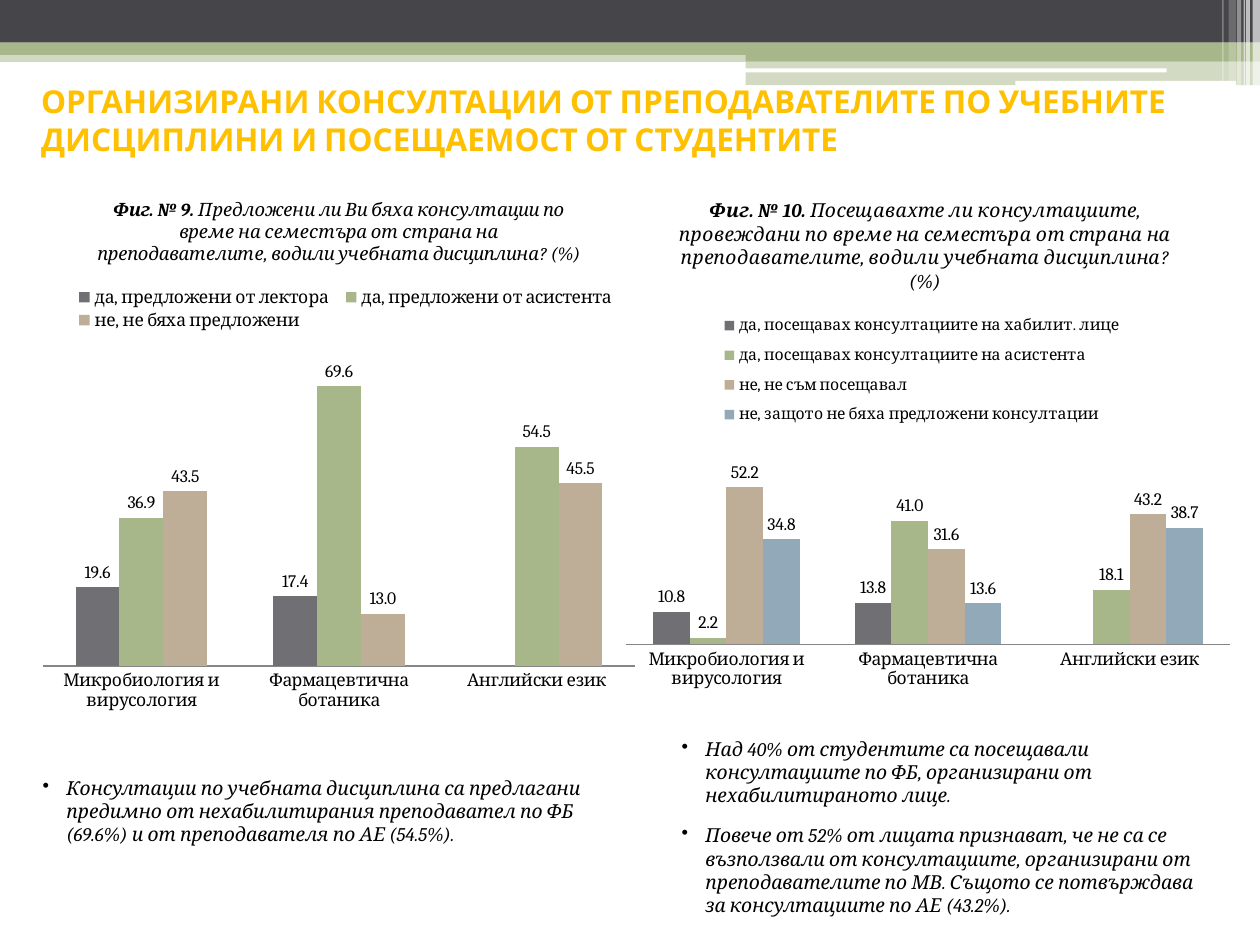
"""Build a slide on teaching consultations with two column charts and their findings."""
from dataclasses import dataclass

from lxml import etree
from pptx import Presentation
from pptx.chart.chart import Chart
from pptx.chart.data import CategoryChartData
from pptx.dml.color import RGBColor
from pptx.enum.chart import XL_CHART_TYPE, XL_LABEL_POSITION, XL_LEGEND_POSITION, XL_TICK_MARK
from pptx.enum.shapes import MSO_SHAPE
from pptx.enum.text import MSO_ANCHOR
from pptx.oxml import parse_xml
from pptx.oxml.ns import nsdecls, qn
from pptx.slide import Slide
from pptx.text.text import Font, TextFrame
from pptx.util import Cm, Pt

RECT, ROUND = MSO_SHAPE.RECTANGLE, MSO_SHAPE.ROUNDED_RECTANGLE
COLUMNS = XL_CHART_TYPE.COLUMN_CLUSTERED
LEGEND_TOP = XL_LEGEND_POSITION.TOP
LABEL_ABOVE = XL_LABEL_POSITION.OUTSIDE_END
NO_TICK = XL_TICK_MARK.NONE
MIDDLE = MSO_ANCHOR.MIDDLE

Box = tuple[float, float, float, float]


@dataclass(frozen=True)
class Theme:
    dark: str = "46464A"
    green: str = "A7B789"
    white: str = "FFFFFF"
    black: str = "000000"
    gold: str = "FFC000"
    axis: str = "868686"
    series: tuple[str, ...] = ("6F6F74", "A7B789", "BEAE98", "92A9B9")
    heading_font: str = "Cabin"
    body_font: str = "Cambria"
    heading_size: float = 18
    body_size: float = 11
    chart_size: float = 10


@dataclass(frozen=True)
class Stripe:
    box: Box
    color: str
    opacity: int = 100
    preset: MSO_SHAPE = RECT


@dataclass(frozen=True)
class Figure:
    box: Box
    number: str
    question: str
    title_size: float
    legend_size: float
    legend_area: Box
    plot_area: Box
    maximum: float
    answers: dict[str, tuple[float | None, ...]]


@dataclass(frozen=True)
class Findings:
    box: Box
    points: tuple[str, ...]


THEME = Theme()
SUBJECTS = ("Микробиология и вирусология", "Фармацевтична ботаника", "Английски език")
HEADING = ("ОРГАНИЗИРАНИ КОНСУЛТАЦИИ ОТ ПРЕПОДАВАТЕЛИТЕ ПО УЧЕБНИТЕ "
           "ДИСЦИПЛИНИ И ПОСЕЩАЕМОСТ ОТ СТУДЕНТИТЕ")

STRIPES = (
    Stripe((0, 1.02, 25.4, 0.23), THEME.green, 50),
    Stripe((0, 0, 25.4, 0.86), THEME.dark),
    Stripe((0, 0.86, 25.4, 0.25), THEME.green),
    Stripe((15.03, 0.98, 10.37, 0.25), THEME.green),
    Stripe((15.03, 1.23, 10.37, 0.49), THEME.green, 50),
    Stripe((15.01, 1.38, 8.51, 0.08), THEME.white, preset=ROUND),
    Stripe((20.47, 1.63, 4.45, 0.1), THEME.white, preset=ROUND),
    Stripe((25.25, 0, 0.15, 1.73), THEME.white, 65),
    Stripe((25.12, 0, 0.08, 1.73), THEME.white, 65),
    Stripe((25.07, 0, 0.03, 1.73), THEME.white, 60),
    Stripe((24.94, 0, 0.08, 1.73), THEME.white, 40),
    Stripe((24.77, 0, 0.15, 1.63), THEME.white, 20),
    Stripe((24.64, 0, 0.03, 1.63), THEME.white, 30),
)

FIGURES = (
    Figure(
        (0.61, 3.53, 12.45, 11), "Фиг. № 9.",
        "Предложени ли Ви бяха консултации по време на семестъра от страна на "
        "преподавателите, водили учебната дисциплина? (%)",
        10.5, 10, (0.06, 0.2, 0.9, 0.09), (0.02, 0.31, 0.96, 0.59), 80,
        {"да, предложени от лектора": (19.6, 17.4, None),
         "да, предложени от асистента": (36.9, 69.6, 54.5),
         "не, не бяха предложени": (43.5, 13, 45.5)}),
    Figure(
        (12.09, 3.53, 13.11, 11.4), "Фиг. № 10.",
        "Посещавахте ли консултациите, провеждани по време на семестъра от страна на "
        "преподавателите, водили учебната дисциплина? (%)",
        11, 9, (0.18, 0.23, 0.63, 0.23), (0.04, 0.51, 0.93, 0.32), 60,
        {"да, посещавах консултациите на хабилит. лице": (10.8, 13.8, None),
         "да, посещавах консултациите на асистента": (2.2, 41, 18.1),
         "не, не съм посещавал": (52.2, 31.6, 43.2),
         "не, защото не бяха предложени консултации": (34.8, 13.6, 38.7)}),
)

FINDINGS = (
    Findings((0.61, 15.52, 11.89, 2.69), (
        "Консултации по учебната дисциплина са предлагани предимно от нехабилитирания "
        "преподавател по ФБ (69.6%) и от преподавателя по АЕ (54.5%).",)),
    Findings((13.49, 14.73, 11.2, 3.48), (
        "Над 40% от студентите са посещавали консултациите по ФБ, организирани от "
        "нехабилитираното лице.",
        "Повече от 52% от лицата признават, че не са се възползвали от консултациите, "
        "организирани от преподавателите по МВ. Същото се потвърждава за консултациите "
        "по АЕ (43.2%).")),
)


def lengths(box: Box) -> list[Cm]:
    return [Cm(value) for value in box]


def style(font: Font, name: str, size: float, color: str) -> None:
    font.name, font.size = name, Pt(size)
    font.color.rgb = RGBColor.from_string(color)


def draw_stripe(slide: Slide, stripe: Stripe) -> None:
    band = slide.shapes.add_shape(stripe.preset, *lengths(stripe.box))
    band.shadow.inherit = False
    band.line.fill.background()
    band.fill.solid()
    band.fill.fore_color.rgb = RGBColor.from_string(stripe.color)
    if stripe.opacity < 100:
        color = band.fill._xPr.find(f".//{qn('a:srgbClr')}")
        etree.SubElement(color, qn("a:alpha"), val=str(stripe.opacity * 1000))


def add_text_area(slide: Slide, box: Box) -> TextFrame:
    frame = slide.shapes.add_textbox(*lengths(box)).text_frame
    frame.word_wrap = True
    return frame


def draw_heading(slide: Slide) -> None:
    frame = add_text_area(slide, (0.58, 1.52, 24.21, 1.8))
    frame.vertical_anchor = MIDDLE
    heading = frame.paragraphs[0]
    heading.text = HEADING
    style(heading.font, THEME.heading_font, THEME.heading_size, THEME.gold)
    heading.font.bold = True


def draw_findings(slide: Slide, findings: Findings) -> None:
    frame = add_text_area(slide, findings.box)
    for index, point in enumerate(findings.points):
        finding = frame.add_paragraph() if index else frame.paragraphs[0]
        finding.text = point
        finding.space_after = Pt(10)
        style(finding.font, THEME.body_font, THEME.body_size, THEME.black)
        finding.font.italic = True
        properties = finding._p.get_or_add_pPr()
        properties.set("marL", str(Cm(0.48)))
        properties.set("indent", str(Cm(-0.48)))
        bullet = etree.Element(qn("a:buChar"), char="•")
        properties.find(qn("a:spcAft")).addnext(bullet)


def layout_xml(area: Box, inner: bool = False) -> etree._Element:
    target = '<c:layoutTarget val="inner"/>' if inner else ""
    modes = "".join(f'<c:{axis}Mode val="edge"/>' for axis in "xy")
    values = "".join(f'<c:{key} val="{value}"/>' for key, value in zip("xywh", area))
    return parse_xml(f"<c:layout {nsdecls('c')}><c:manualLayout>{target}{modes}{values}"
                     "</c:manualLayout></c:layout>")


def title_chart(chart: Chart, figure: Figure) -> None:
    title = chart.chart_title.text_frame.paragraphs[0]
    style(title.font, THEME.body_font, figure.title_size, THEME.black)
    for wording, bold in ((f"{figure.number} ", True), (figure.question, False)):
        run = title.add_run()
        run.text = wording
        style(run.font, THEME.body_font, figure.title_size, THEME.black)
        run.font.bold, run.font.italic = bold, True


def draw_figure(slide: Slide, figure: Figure) -> None:
    data = CategoryChartData(number_format="0.0")
    data.categories = SUBJECTS
    for answer, shares in figure.answers.items():
        data.add_series(answer, shares)
    chart = slide.shapes.add_chart(COLUMNS, *lengths(figure.box), data).chart
    style(chart.font, THEME.body_font, THEME.chart_size, THEME.black)
    title_chart(chart, figure)

    chart.has_legend = True
    chart.legend.position = LEGEND_TOP
    chart.legend.include_in_layout = False
    style(chart.legend.font, THEME.body_font, figure.legend_size, THEME.black)
    chart.legend._element.find(qn("c:legendPos")).addnext(layout_xml(figure.legend_area))

    chart.value_axis.visible = False
    chart.value_axis.has_major_gridlines = False
    chart.value_axis.minimum_scale, chart.value_axis.maximum_scale = 0, figure.maximum
    chart.category_axis.major_tick_mark = NO_TICK
    chart.category_axis.format.line.color.rgb = RGBColor.from_string(THEME.axis)

    plot = chart.plots[0]
    plot.gap_width, plot.overlap, plot.vary_by_categories = 150, 0, False
    plot.has_data_labels = True
    labels = plot.data_labels
    labels.show_value, labels.position = True, LABEL_ABOVE
    labels.number_format, labels.number_format_is_linked = "0.0", False
    for series, color in zip(plot.series, THEME.series):
        series.format.fill.solid()
        series.format.fill.fore_color.rgb = RGBColor.from_string(color)

    plot_area = chart._chartSpace.find(f".//{qn('c:plotArea')}")
    for automatic in plot_area.findall(qn("c:layout")):
        plot_area.remove(automatic)
    plot_area.insert(0, layout_xml(figure.plot_area, inner=True))


def main() -> None:
    deck = Presentation()
    deck.slide_width, deck.slide_height = Cm(25.4), Cm(19.05)
    slide = deck.slides.add_slide(deck.slide_layouts[6])
    for stripe in STRIPES:
        draw_stripe(slide, stripe)
    draw_heading(slide)
    for findings in FINDINGS:
        draw_findings(slide, findings)
    for figure in FIGURES:
        draw_figure(slide, figure)
    deck.save("out.pptx")


if __name__ == "__main__":
    main()
